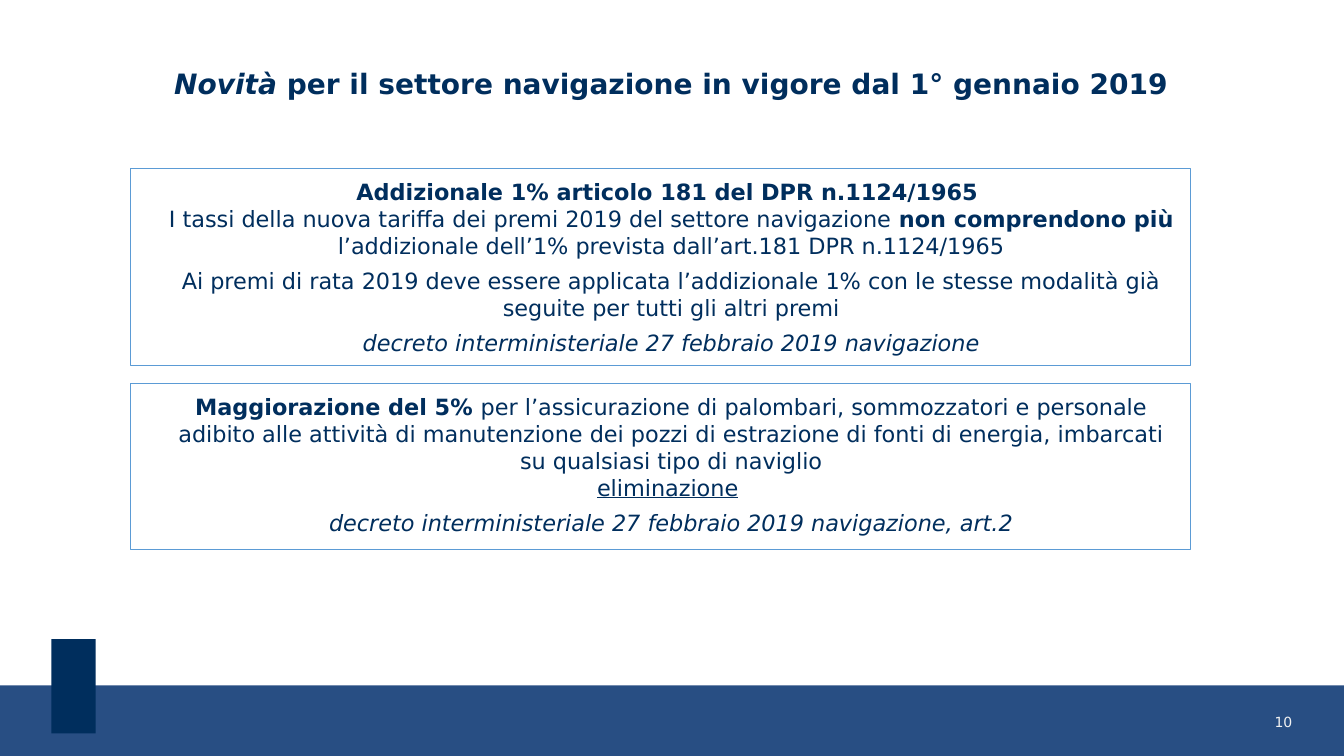
from dataclasses import dataclass

from pptx import Presentation
from pptx.dml.color import RGBColor
from pptx.enum.shapes import MSO_SHAPE
from pptx.enum.text import MSO_ANCHOR, PP_ALIGN
from pptx.util import Pt


@dataclass(frozen=True)
class Theme:
    font: str = "DejaVu Sans"
    navy: RGBColor = RGBColor(0x00, 0x2E, 0x5D)
    band: RGBColor = RGBColor(0x28, 0x4E, 0x83)
    border: RGBColor = RGBColor(0x5B, 0x9B, 0xD5)
    page_number: RGBColor = RGBColor(0xF2, 0xF2, 0xF2)
    title_size: float = 20
    body_size: float = 16
    page_number_size: float = 10


THEME = Theme()
SLIDE_WIDTH, SLIDE_HEIGHT = 960, 540
PANEL_LEFT, PANEL_WIDTH = 92.9, 757.4
INSET = 7.2
INDENT = 15.84

# Each paragraph is (space after, runs); each run is (text, styles):
# b for bold, i for italic, u for underlined.
TITLE = [
    (0, [("Novità ", "bi"),
         ("per il settore navigazione in vigore dal 1° gennaio 2019", "b")]),
]
SURCHARGE = [
    (0, [("Addizionale 1% articolo 181 del DPR n.1124/1965 ", "b")]),
    (6, [("I tassi della nuova tariffa dei premi 2019 del settore navigazione ", ""),
         ("non comprendono più ", "b"),
         ("l’addizionale dell’1% prevista dall’art.181 DPR n.1124/1965", "")]),
    (6, [("Ai premi di rata 2019 deve essere applicata l’addizionale 1% con le "
          "stesse modalità già seguite per tutti gli altri premi", "")]),
    (6, [("decreto interministeriale 27 febbraio 2019 navigazione", "i")]),
]
INCREASE = [
    (0, [("Maggiorazione del 5% ", "b"),
         ("per l’assicurazione di palombari, sommozzatori e personale adibito alle "
          "attività di manutenzione dei pozzi di estrazione di fonti di energia, "
          "imbarcati su qualsiasi tipo di naviglio", "")]),
    (6, [("eliminazione", "u"), (" ", "")]),
    (0, [("decreto interministeriale 27 febbraio 2019 navigazione, art.2", "i")]),
]


def add_rectangle(slide, left, top, width, height, fill=None, line=None):
    shape = slide.shapes.add_shape(
        MSO_SHAPE.RECTANGLE, Pt(left), Pt(top), Pt(width), Pt(height))
    shape.shadow.inherit = False
    if fill is None:
        shape.fill.background()
    else:
        shape.fill.solid()
        shape.fill.fore_color.rgb = fill
    if line is None:
        shape.line.fill.background()
    else:
        shape.line.color.rgb = line
        shape.line.width = Pt(0.75)
    return shape


def write_text(shape, paragraphs, size, color=THEME.navy, align=PP_ALIGN.CENTER,
               inset=INSET, indent=0, line_spacing=1.0):
    frame = shape.text_frame
    frame.word_wrap = True
    frame.vertical_anchor = MSO_ANCHOR.TOP
    frame.margin_left = frame.margin_right = Pt(inset)
    frame.margin_top = frame.margin_bottom = Pt(inset)
    for index, (space_after, runs) in enumerate(paragraphs):
        paragraph = frame.add_paragraph() if index else frame.paragraphs[0]
        paragraph.alignment = align
        paragraph.line_spacing = line_spacing
        paragraph.space_after = Pt(space_after)
        paragraph._p.get_or_add_pPr().set("marL", str(Pt(indent)))
        for text, styles in runs:
            run = paragraph.add_run()
            run.text = text
            run.font.name = THEME.font
            run.font.size = Pt(size)
            run.font.color.rgb = color
            run.font.bold = "b" in styles
            run.font.italic = "i" in styles
            run.font.underline = "u" in styles


def add_text(slide, left, top, width, height, paragraphs, size, **options):
    box = slide.shapes.add_textbox(Pt(left), Pt(top), Pt(width), Pt(height))
    write_text(box, paragraphs, size, **options)


def add_panel(slide, top, height, paragraphs):
    panel = add_rectangle(slide, PANEL_LEFT, top, PANEL_WIDTH, height,
                          line=THEME.border)
    write_text(panel, paragraphs, THEME.body_size, indent=INDENT)


def main():
    presentation = Presentation()
    presentation.slide_width = Pt(SLIDE_WIDTH)
    presentation.slide_height = Pt(SLIDE_HEIGHT)
    slide = presentation.slides.add_slide(presentation.slide_layouts[6])

    add_rectangle(slide, 0, 489.6, SLIDE_WIDTH, 50.4, fill=THEME.band)
    add_rectangle(slide, 36.7, 456.5, 31.7, 67.4, fill=THEME.navy)
    add_text(slide, 36, 43.2, 887, 38.2, TITLE, THEME.title_size, line_spacing=0.9)
    add_panel(slide, 120.2, 141.1, SURCHARGE)
    add_panel(slide, 273.6, 118.8, INCREASE)
    add_text(slide, 808.6, 509.8, 114.5, 28.8, [(0, [("10", "")])],
             THEME.page_number_size, color=THEME.page_number,
             align=PP_ALIGN.RIGHT, inset=0)
    presentation.save("out.pptx")


if __name__ == "__main__":
    main()
